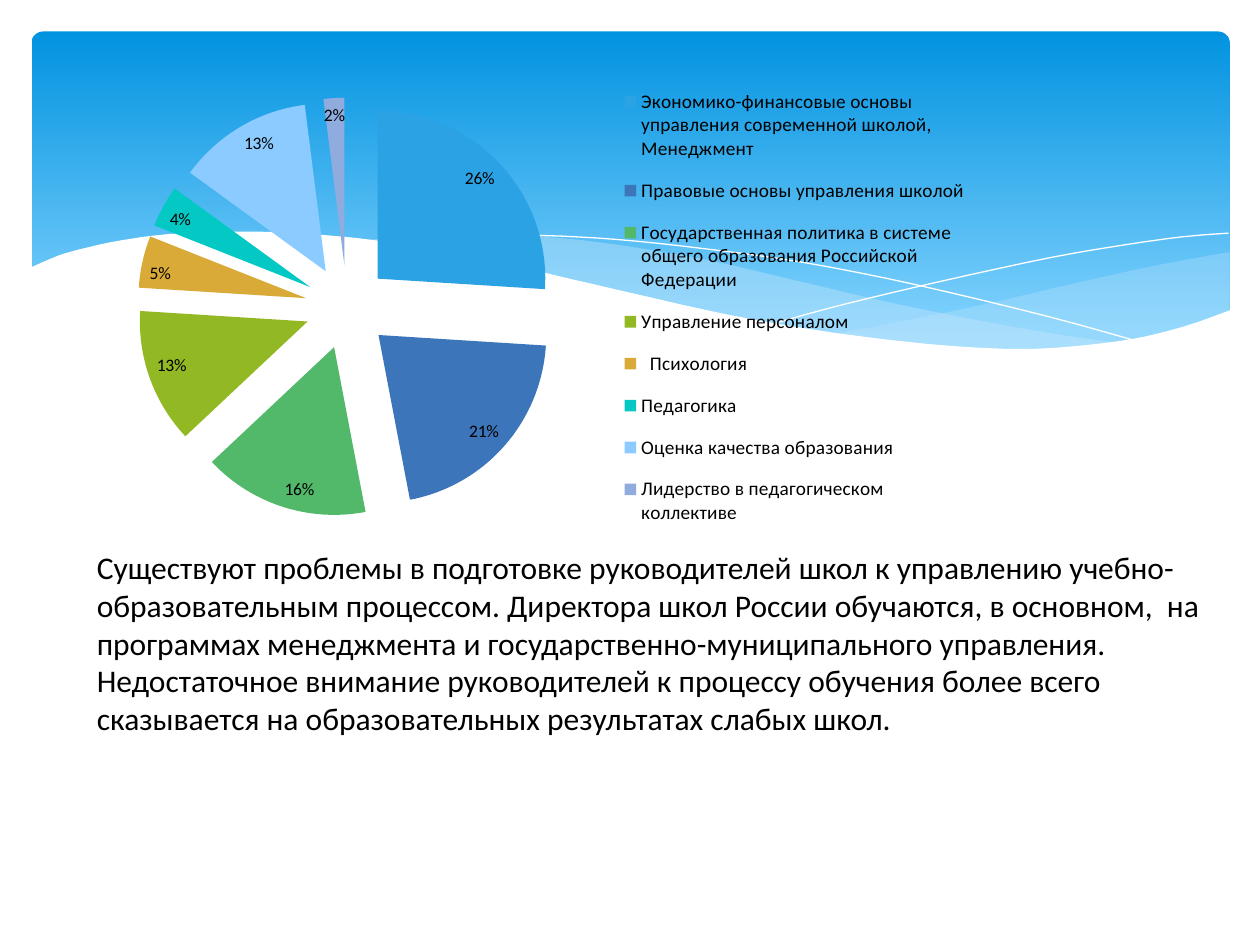
import pptx
import pptx.chart.data
import pptx.dml.color
import pptx.enum.chart
import pptx.enum.shapes
import pptx.oxml
import pptx.oxml.ns
import pptx.util

RGB = pptx.dml.color.RGBColor
Inches, Pt = pptx.util.Inches, pptx.util.Pt
qn = pptx.oxml.ns.qn
WHITE, BLACK = RGB(255, 255, 255), RGB(0, 0, 0)
SKY_TOP, SKY_BOTTOM = RGB(0x02, 0x93, 0xE0), RGB(0x83, 0xD3, 0xFE)
MIST = RGB(0xC6, 0xE7, 0xFC)
FONT = "Calibri"

# Content: topic, share in percent, slice colour
TOPICS = [
    ("Экономико-финансовые основы управления современной школой, Менеджмент", 26, RGB(0x2B, 0xA2, 0xE3)),
    ("Правовые основы управления школой", 21, RGB(0x3D, 0x75, 0xBA)),
    ("Государственная политика в системе общего образования Российской Федерации", 16, RGB(0x52, 0xB9, 0x6A)),
    ("Управление персоналом", 13, RGB(0x92, 0xB9, 0x24)),
    ("  Психология", 5, RGB(0xDA, 0xAA, 0x38)),
    ("Педагогика", 4, RGB(0x04, 0xC8, 0xC3)),
    ("Оценка качества образования", 13, RGB(0x8C, 0xCB, 0xFF)),
    ("Лидерство в педагогическом коллективе", 2, RGB(0x90, 0xAB, 0xDD)),
]
SUMMARY = (
    "Существуют проблемы в подготовке руководителей школ к управлению "
    "учебно-образовательным процессом. Директора школ России обучаются, в основном,  на "
    "программах менеджмента и государственно-муниципального управления.  "
    "Недостаточное внимание руководителей к процессу обучения более всего "
    "сказывается на образовательных результатах слабых школ."
)

# Waves: fill, opacity in percent, smooth edges that join into one outline
WAVES = [
    (MIST, 29, [
        [(9.76, 2), (9.21, 2.1), (8.61, 2.23), (7.79, 2.42), (7.06, 2.57), (6.61, 2.65)],
        [(6.61, 2.65), (7.05, 2.71), (7.57, 2.76), (8.14, 2.78), (8.72, 2.74),
         (9.21, 2.65), (9.49, 2.57), (9.76, 2.47)]]),
    (MIST, 40, [
        [(8.93, 2.73), (8.37, 2.65), (7.75, 2.54), (7.06, 2.4), (6.29, 2.22), (5.69, 2.08),
         (5.14, 1.98), (4.65, 1.91), (4.2, 1.87), (3.8, 1.85), (3.44, 1.86), (2.86, 1.91)],
        [(2.86, 1.91), (3.42, 1.99), (4.04, 2.11), (4.49, 2.22), (5.3, 2.4), (6.01, 2.55),
         (6.65, 2.66), (7.22, 2.74), (7.73, 2.77), (8.18, 2.78), (8.57, 2.77), (8.93, 2.73)]]),
    (None, 100, [
        [(3.09, 1.95), (3.44, 1.9), (3.87, 1.87), (4.33, 1.87), (4.89, 1.9), (5.56, 1.97),
         (6.36, 2.08), (7.27, 2.26), (8.31, 2.51), (9.07, 2.72)]]),
    (None, 100, [
        [(6.13, 2.57), (6.72, 2.41), (7.48, 2.23), (8.36, 2.04), (8.95, 1.94),
         (9.38, 1.88), (9.75, 1.85)]]),
    (WHITE, 100, [
        [(9.77, 2.46), (9.4, 2.59), (8.99, 2.69), (8.5, 2.75), (8.09, 2.77), (7.61, 2.75),
         (7.08, 2.7), (6.48, 2.62), (5.79, 2.5), (5.03, 2.33), (4.47, 2.2), (3.91, 2.07),
         (3.4, 1.97), (2.92, 1.9), (2.5, 1.86), (2.11, 1.84), (1.77, 1.84), (1.32, 1.86),
         (0.95, 1.91), (0.67, 1.97), (0.46, 2.03), (0.23, 2.13)],
        [(0.23, 3.29), (9.77, 3.29)]]),
]
STEPS = 4  # straight pieces between neighbouring knots


def smooth(knots):
    """Catmull-Rom curve through the knots."""
    padded = [knots[0], *knots, knots[-1]]
    points = [knots[0]]
    for a, b, c, d in zip(padded, padded[1:], padded[2:], padded[3:]):
        for t in (k / STEPS for k in range(1, STEPS + 1)):
            points.append(tuple(
                q + t * ((r - p) + t * ((2 * p - 5 * q + 4 * r - e) + t * (3 * q - p - 3 * r + e))) / 2
                for p, q, r, e in zip(a, b, c, d)))
    return points


def add_wave(s, color, opacity, edges):
    points = [(x * 1000, y * 1000) for edge in edges
              for x, y in (smooth(edge) if len(edge) > 2 else edge)]
    builder = s.shapes.build_freeform(*points[0], scale=914.4)
    builder.add_line_segments(points[1:], close=color is not None)
    sp = builder.convert_to_shape()
    sp.shadow.inherit = False
    if color is None:
        sp.fill.background()
        sp.line.color.rgb = WHITE
        sp.line.width = Pt(0)
        return
    sp.fill.solid()
    sp.fill.fore_color.rgb = color
    sp.line.fill.background()
    if opacity < 100:
        clr = sp._element.spPr.find(".//" + qn("a:srgbClr"))
        clr.makeelement(qn("a:alpha"))
        alpha = pptx.oxml.parse_xml(
            f'<a:alpha {pptx.oxml.ns.nsdecls("a")} val="{opacity * 1000}"/>')
        clr.append(alpha)


def chart_layout(x, y, w, h, inner=False):
    target = '<c:layoutTarget val="inner"/>' if inner else ""
    sizes = "".join(f'<c:{n} val="{v}"/>' for n, v in zip("xywh", (x, y, w, h)))
    return pptx.oxml.parse_xml(
        f'<c:layout {pptx.oxml.ns.nsdecls("c")}><c:manualLayout>{target}'
        f'<c:xMode val="edge"/><c:yMode val="edge"/>{sizes}</c:manualLayout></c:layout>')


def set_font(font, size):
    for name, value in {"name": FONT, "size": Pt(size)}.items():
        setattr(font, name, value)
    font.color.rgb = BLACK


prs = pptx.Presentation()
prs.slide_width, prs.slide_height = Inches(10), Inches(7.5)
s = prs.slides.add_slide(prs.slide_layouts[6])

# Sky banner
sp = s.shapes.add_shape(pptx.enum.shapes.MSO_SHAPE.ROUNDED_RECTANGLE,
                        *map(Inches, (0.25, 0.25, 9.51, 2.7)))
sp.adjustments[0] = 0.034
sp.shadow.inherit = False
sp.line.fill.background()
sp.fill.gradient()
sp.fill.gradient_angle = 270
for stop, position, color in zip(sp.fill.gradient_stops, (0, 0.9), (SKY_TOP, SKY_BOTTOM)):
    stop.position = position
    stop.color.rgb = color

# Waves over the banner
for wave in WAVES:
    add_wave(s, *wave)

# Exploded pie
data = pptx.chart.data.CategoryChartData()
data.categories = [topic for topic, _, _ in TOPICS]
data.add_series("Series 1", [share for _, share, _ in TOPICS])
chart = s.shapes.add_chart(pptx.enum.chart.XL_CHART_TYPE.PIE,
                           *map(Inches, (0.35, 0.36, 7.4, 4.16)), data).chart
chart.has_title = False
set_font(chart.font, 10)
chart.plots[0].vary_by_categories = True
series = chart.plots[0].series[0]
for i, (_, _, color) in enumerate(TOPICS):
    fill = series.points[i].format.fill
    fill.solid()
    fill.fore_color.rgb = color
series._element.find(qn("c:dPt")).addprevious(pptx.oxml.parse_xml(
    f'<c:explosion {pptx.oxml.ns.nsdecls("c")} val="25"/>'))
labels = series.data_labels
for name, value in {"show_percentage": True, "show_value": False, "number_format": "0%",
                    "number_format_is_linked": False,
                    "position": pptx.enum.chart.XL_LABEL_POSITION.INSIDE_END}.items():
    setattr(labels, name, value)
set_font(labels.font, 10)

# Legend and plot placement, as shares of the chart
chart.has_legend = True
legend = chart.legend
legend.position = pptx.enum.chart.XL_LEGEND_POSITION.RIGHT
legend.include_in_layout = False
set_font(legend.font, 11)
for old in legend._element.findall(qn("c:layout")):
    legend._element.remove(old)
legend._element.find(qn("c:legendPos")).addnext(chart_layout(0.62, 0.05, 0.37, 0.9))
plot_area = chart._chartSpace.chart.plotArea
for old in plot_area.findall(qn("c:layout")):
    plot_area.remove(old)
plot_area.insert(0, chart_layout(0.06, 0.1, 0.53, 0.8, inner=True))

# Summary
tf = s.shapes.add_textbox(*map(Inches, (0.67, 4.3, 8.98, 1.62))).text_frame
tf.word_wrap = True
r = tf.paragraphs[0].add_run()
r.text = SUMMARY
set_font(r.font, 18)

prs.save("out.pptx")
